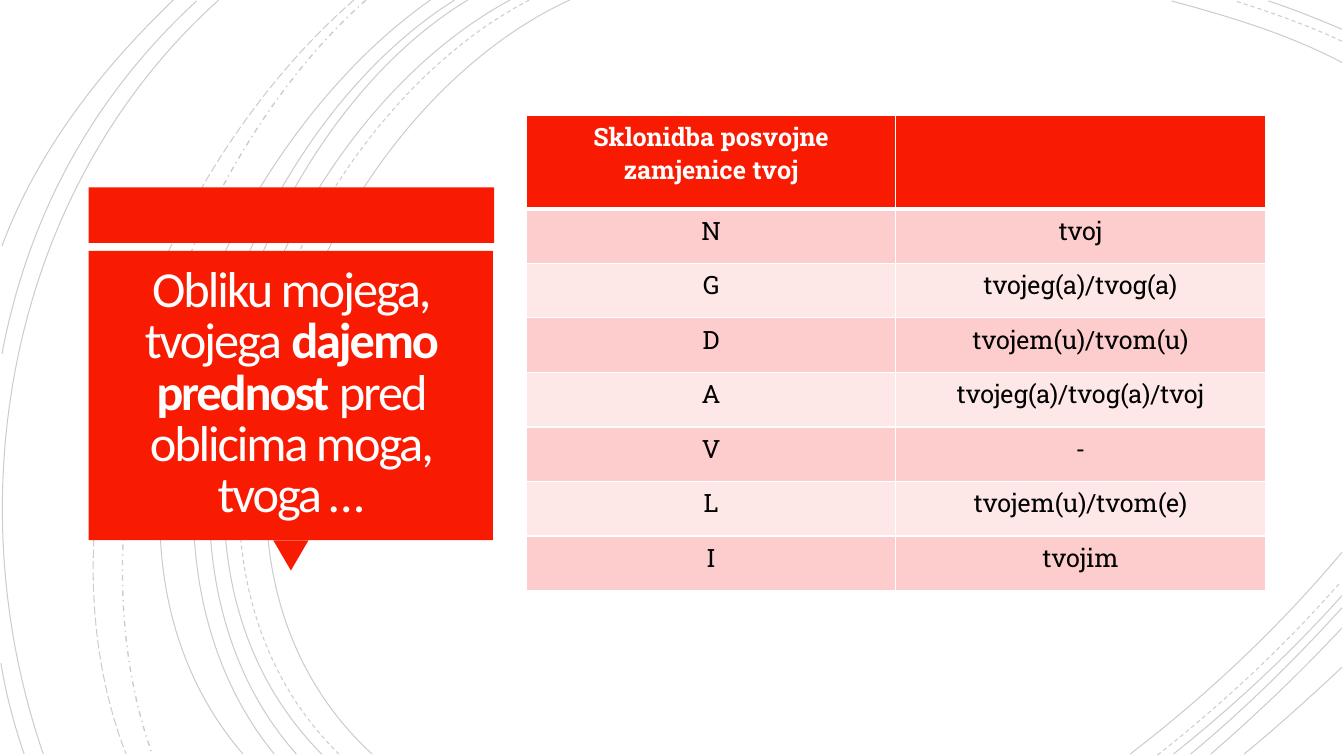
from dataclasses import dataclass

from lxml.etree import SubElement
from pptx import Presentation
from pptx.dml.color import RGBColor
from pptx.enum.dml import MSO_LINE
from pptx.enum.shapes import MSO_SHAPE
from pptx.enum.text import MSO_ANCHOR, PP_ALIGN
from pptx.oxml.ns import qn
from pptx.util import Inches, Pt

RED = RGBColor(0xF8, 0x1B, 0x02)
DARK_PINK = RGBColor(0xFC, 0xCD, 0xCC)
LIGHT_PINK = RGBColor(0xFE, 0xE8, 0xE7)
WHITE = RGBColor(0xFF, 0xFF, 0xFF)
OFF_WHITE = RGBColor(0xFF, 0xFE, 0xFF)
BLACK = RGBColor(0, 0, 0)

TABLE_WIDTH = 7.33
TABLE_HEIGHT = 4.72
HEADER_HEIGHT = 0.93


@dataclass(frozen=True)
class Arc:
    """A cubic curve: start, two control points and end, in inches."""
    points: tuple
    dash: MSO_LINE = MSO_LINE.SOLID
    width: float = 0.75


@dataclass(frozen=True)
class Block:
    preset: MSO_SHAPE
    left: float
    top: float
    width: float
    height: float
    rotation: float = 0


ARCS = [
    Arc(((5.65, 0), (3.15, 1.15), (1.43, 5.4), (3.69, 7.48))),
    Arc(((13.31, 0.62), (12.78, 0.34), (12.18, 0.16), (11.62, 0.01))),
    Arc(((11.21, 7.48), (11.97, 6.9), (12.69, 6.22), (13.31, 5.48))),
    Arc(((5.25, 0), (2.85, 1.25), (1.23, 5.37), (3.36, 7.48)), MSO_LINE.DASH),
    Arc(((13.31, 0.41), (12.97, 0.25), (12.6, 0.12), (12.25, 0.01)), MSO_LINE.DASH),
    Arc(((11.48, 7.49), (12.13, 6.98), (12.75, 6.4), (13.3, 5.77)), MSO_LINE.DASH),
    Arc(((5.06, 0), (2.7, 1.27), (1.1, 5.37), (3.19, 7.48))),
    Arc(((13.31, 0.29), (13.07, 0.19), (12.83, 0.09), (12.58, 0.01))),
    Arc(((11.64, 7.48), (12.23, 7.01), (12.8, 6.48), (13.31, 5.91))),
    Arc(((4.64, 0), (2.44, 1.33), (1.1, 5.41), (2.94, 7.48))),
    Arc(((11.81, 7.48), (12.34, 7.04), (12.84, 6.55), (13.31, 6.03))),
    Arc(((4.51, 0), (2.31, 1.38), (0.97, 5.33), (2.72, 7.48))),
    Arc(((12.01, 7.48), (12.46, 7.09), (12.9, 6.67), (13.31, 6.23))),
    Arc(((4.27, 0), (2.17, 1.47), (0.53, 5.29), (2.41, 7.48))),
    Arc(((12.34, 7.48), (12.67, 7.21), (12.99, 6.92), (13.31, 6.62))),
    Arc(((3.63, 0), (1.76, 1.66), (0.65, 5.09), (1.51, 7.48)), MSO_LINE.DASH_DOT, 1),
    Arc(((3.51, 0), (1.57, 1.69), (0.29, 4.99), (1.25, 7.48)), MSO_LINE.LONG_DASH),
    Arc(((2.17, 0), (0.11, 1.85), (-0.46, 4.9), (0.43, 7.48))),
    Arc(((1.95, 0.01), (0.92, 0.96), (0.28, 2.14), (0.02, 3.51))),
    Arc(((0.01, 6.58), (0.06, 6.89), (0.14, 7.19), (0.24, 7.48))),
    Arc(((1.72, 0), (1, 0.69), (0.37, 1.5), (0.02, 2.44))),
]

CALLOUT = [
    Block(MSO_SHAPE.RECTANGLE, 0.88, 1.86, 4.02, 0.55),
    Block(MSO_SHAPE.ISOSCELES_TRIANGLE, 2.71, 5.36, 0.35, 0.3, 180),
    Block(MSO_SHAPE.RECTANGLE, 0.88, 2.49, 4.01, 2.87),
]

TITLE_RUNS = [
    ("Obliku mojega, tvojega ", False),
    ("dajemo prednost", True),
    (" pred oblicima moga, tvoga …", False),
]

DECLENSION = [
    ("Sklonidba posvojne zamjenice tvoj", ""),
    ("N", "tvoj"),
    ("G", "tvojeg(a)/tvog(a)"),
    ("D", "tvojem(u)/tvom(u)"),
    ("A", "tvojeg(a)/tvog(a)/tvoj"),
    ("V", "-"),
    ("L", "tvojem(u)/tvom(e)"),
    ("I", "tvojim"),
]


def write_text(frame, runs, *, font: str, size: float, color: RGBColor,
               line_spacing: float | None = None, tracking: float = 0) -> None:
    """Fill the frame with one centred paragraph of (text, bold) runs."""
    paragraph = frame.paragraphs[0]
    paragraph.alignment = PP_ALIGN.CENTER
    if line_spacing:
        paragraph.line_spacing = line_spacing
    for text, bold in runs:
        run = paragraph.add_run()
        run.text = text
        run.font.name = font
        run.font.size = Pt(size)
        run.font.bold = bold
        run.font.color.rgb = color
        if tracking:
            run.font._element.set("spc", str(int(tracking * 100)))


def draw_arc(slide, arc: Arc) -> None:
    """Outline the control points, then turn the segments into one curve."""
    start, *others = [(Inches(x), Inches(y)) for x, y in arc.points]
    builder = slide.shapes.build_freeform(*start)
    builder.add_line_segments(others, close=False)
    curve = builder.convert_to_shape()
    curve.shadow.inherit = False
    curve.fill.background()
    curve.line.color.rgb = BLACK
    curve.line.width = Pt(arc.width)
    curve.line.dash_style = arc.dash
    stroke_color = next(curve.line._ln.iter(qn("a:srgbClr")))
    SubElement(stroke_color, qn("a:alpha"), val="20000")

    outline = next(curve._element.iter(qn("a:path")))
    bezier = SubElement(outline, qn("a:cubicBezTo"))
    for segment in outline.findall(qn("a:lnTo")):
        bezier.append(segment[0])
        outline.remove(segment)


def draw_block(slide, block: Block) -> None:
    shape = slide.shapes.add_shape(
        block.preset, Inches(block.left), Inches(block.top),
        Inches(block.width), Inches(block.height))
    shape.rotation = block.rotation
    shape.shadow.inherit = False
    shape.fill.solid()
    shape.fill.fore_color.rgb = RED
    shape.line.fill.background()


def add_title(slide) -> None:
    title = slide.shapes.add_textbox(Inches(0.97), Inches(2.57), Inches(3.83), Inches(2.69))
    frame = title.text_frame
    frame.word_wrap = True
    frame.vertical_anchor = MSO_ANCHOR.MIDDLE
    frame.margin_left = frame.margin_right = Inches(0.25)
    frame.margin_top = frame.margin_bottom = Inches(0.25)
    write_text(frame, TITLE_RUNS, font="Calibri", size=36, color=OFF_WHITE,
               line_spacing=0.85, tracking=-1.5)


def set_borders(cell, top: float, bottom: float) -> None:
    properties = cell._tc.get_or_add_tcPr()
    for side, width in (("L", 1), ("R", 1), ("T", top), ("B", bottom)):
        border = SubElement(properties, qn(f"a:ln{side}"), w=str(Pt(width)))
        fill = SubElement(border, qn("a:solidFill"))
        SubElement(fill, qn("a:srgbClr"), val=str(WHITE))


def add_declension_table(slide) -> None:
    table = slide.shapes.add_table(
        len(DECLENSION), 2, Inches(5.22), Inches(1.14),
        Inches(TABLE_WIDTH), Inches(TABLE_HEIGHT)).table
    case_height = (TABLE_HEIGHT - HEADER_HEIGHT) / (len(DECLENSION) - 1)
    for row, texts in enumerate(DECLENSION):
        is_header = row == 0
        table.rows[row].height = Inches(HEADER_HEIGHT if is_header else case_height)
        for column, text in enumerate(texts):
            cell = table.cell(row, column)
            set_borders(cell, top=3 if row == 1 else 1, bottom=3 if is_header else 1)
            cell.fill.solid()
            cell.fill.fore_color.rgb = (
                RED if is_header else DARK_PINK if row % 2 else LIGHT_PINK)
            if text:
                write_text(cell.text_frame, [(text, is_header)], font="Roboto Slab",
                           size=18, color=WHITE if is_header else BLACK)


def main() -> None:
    presentation = Presentation()
    presentation.slide_width = Inches(13.33)
    presentation.slide_height = Inches(7.5)
    slide = presentation.slides.add_slide(presentation.slide_layouts[6])
    for arc in ARCS:
        draw_arc(slide, arc)
    for block in CALLOUT:
        draw_block(slide, block)
    add_title(slide)
    add_declension_table(slide)
    presentation.save("out.pptx")


if __name__ == "__main__":
    main()
